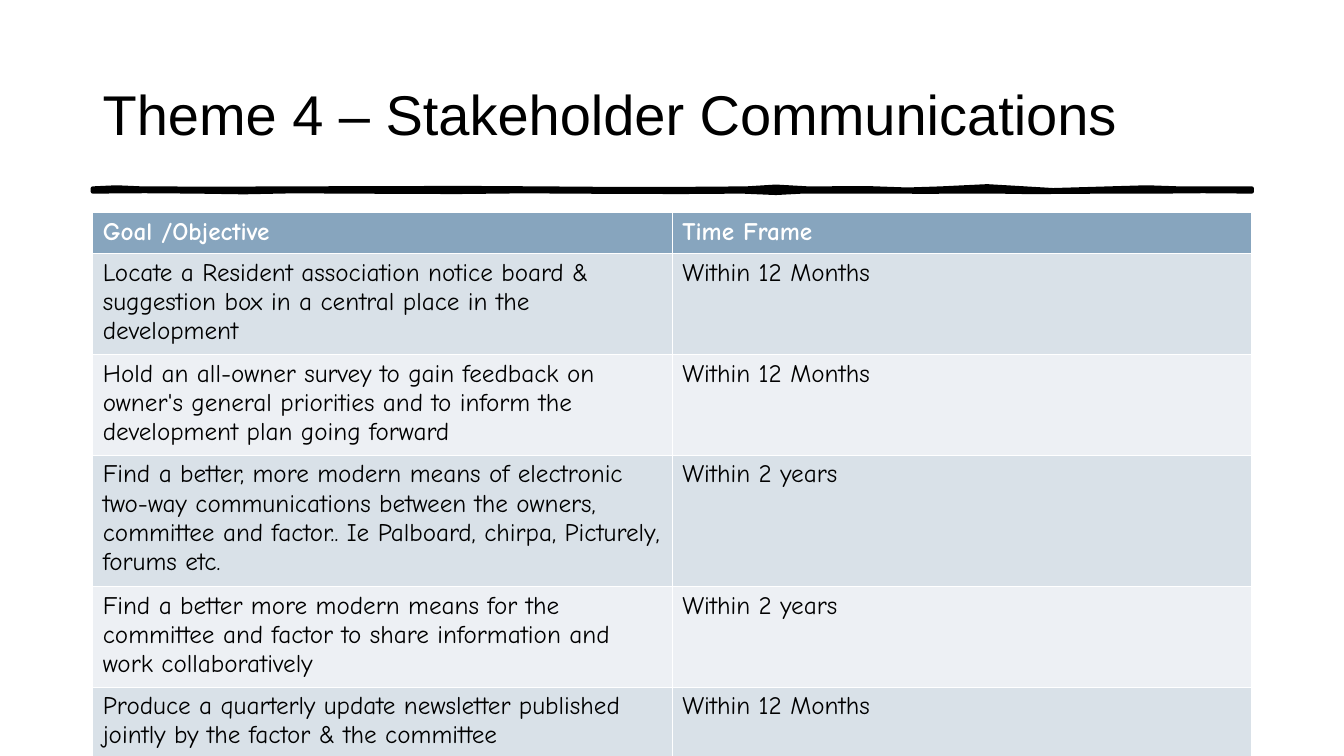
"""Build the stakeholder communications slide with its brush rule and goals table."""
from dataclasses import dataclass

from pptx import Presentation
from pptx.dml.color import RGBColor
from pptx.enum.text import MSO_ANCHOR
from pptx.util import Pt

COLORS = {
    "ink": "000000",
    "white": "FFFFFF",
    "header": "87A5BE",
    "odd": "D9E1E8",
    "even": "EDF0F4",
}
LEFT, WIDTH = 66.24, 828
RULE_TOP, TABLE_TOP, ROW_HEIGHT = 134.64, 151.92, 29.2
RULE_UPPER = [
    (0, 0), (17, -0.8), (35, 0), (86, 0.2), (147, 0), (201, -0.2), (269, -0.3),
    (320, 0), (373, 0.4), (430, 0.3), (467, 0), (488, -1.3), (511, 0),
    (554, -0.2), (582, 0.8), (606, 0), (639, -1.6), (666, 0), (686, 1.2),
    (726, 0), (753, -0.8), (776, 0), (828, 0),
]
RULE_LOWER = [
    (828, 2.2), (793, 1.9), (762, 2.2), (700, 2.3), (672, 2.6), (646, 2.2),
    (594, 2.3), (550, 2.2), (507, 2.2), (488, 3.2), (464, 2.2), (420, 2.5),
    (360, 2.3), (308, 2), (260, 2.5), (206, 2.3), (143, 2), (108, 2.7),
    (74, 2.2), (37, 1.9), (0, 2.2),
]


@dataclass
class Goal:
    objective: str
    time_frame: str


HEADING = Goal("Goal /Objective", "Time Frame")
GOALS = [
    Goal("Locate a Resident association notice board & suggestion box in a "
         "central place in the development", "Within 12 Months"),
    Goal("Hold an all-owner survey to gain feedback on owner's general "
         "priorities and to inform the development plan going forward",
         "Within 12 Months"),
    Goal("Find a better, more modern means of electronic two-way "
         "communications between the owners, committee and factor.. "
         "Ie Palboard, chirpa, Picturely, forums etc.", "Within 2 years"),
    Goal("Find a better more modern means for the committee and factor to "
         "share information and work collaboratively", "Within 2 years"),
    Goal("Produce a quarterly update newsletter published jointly by the "
         "factor & the committee", "Within 12 Months"),
]


def rgb(name: str) -> RGBColor:
    return RGBColor.from_string(COLORS[name])


def format_text(tf, font: str, size: float, color: str, bold: bool = False) -> None:
    for p in tf.paragraphs:
        for r in p.runs:
            r.font.name = font
            r.font.size = Pt(size)
            r.font.bold = bold
            r.font.color.rgb = rgb(color)


def draw_rule(slide) -> None:
    points = [(Pt(LEFT + x), Pt(RULE_TOP + y)) for x, y in RULE_UPPER + RULE_LOWER]
    builder = slide.shapes.build_freeform(*points[0])
    builder.add_line_segments(points[1:], close=True)
    sp = builder.convert_to_shape()
    sp.shadow.inherit = False
    sp.fill.solid()
    sp.fill.fore_color.rgb = rgb("ink")
    sp.line.color.rgb = rgb("ink")
    sp.line.width = Pt(3)


def draw_title(slide, title: str) -> None:
    sp = slide.shapes.add_textbox(Pt(LEFT), Pt(28.8), Pt(WIDTH), Pt(104.4))
    tf = sp.text_frame
    tf.word_wrap = True
    tf.vertical_anchor = MSO_ANCHOR.MIDDLE
    tf.text = title
    format_text(tf, "Arial", 40, "ink")


def draw_goals(slide, goals: list[Goal]) -> None:
    rows = [HEADING, *goals]
    table = slide.shapes.add_table(
        len(rows), 2, Pt(LEFT), Pt(TABLE_TOP), Pt(WIDTH), Pt(ROW_HEIGHT * len(rows))
    ).table
    for i, goal in enumerate(rows):
        is_header = i == 0
        fill = "header" if is_header else "odd" if i % 2 else "even"
        for j, text in enumerate((goal.objective, goal.time_frame)):
            cell = table.cell(i, j)
            cell.fill.solid()
            cell.fill.fore_color.rgb = rgb(fill)
            cell.text_frame.text = text
            format_text(cell.text_frame, "Comic Neue", 18,
                        "white" if is_header else "ink", is_header)


def main() -> None:
    prs = Presentation()
    prs.slide_width, prs.slide_height = Pt(960), Pt(540)
    slide = prs.slides.add_slide(prs.slide_layouts[6])
    draw_rule(slide)
    draw_title(slide, "Theme 4 – Stakeholder Communications")
    draw_goals(slide, GOALS)
    prs.save("out.pptx")


if __name__ == "__main__":
    main()
